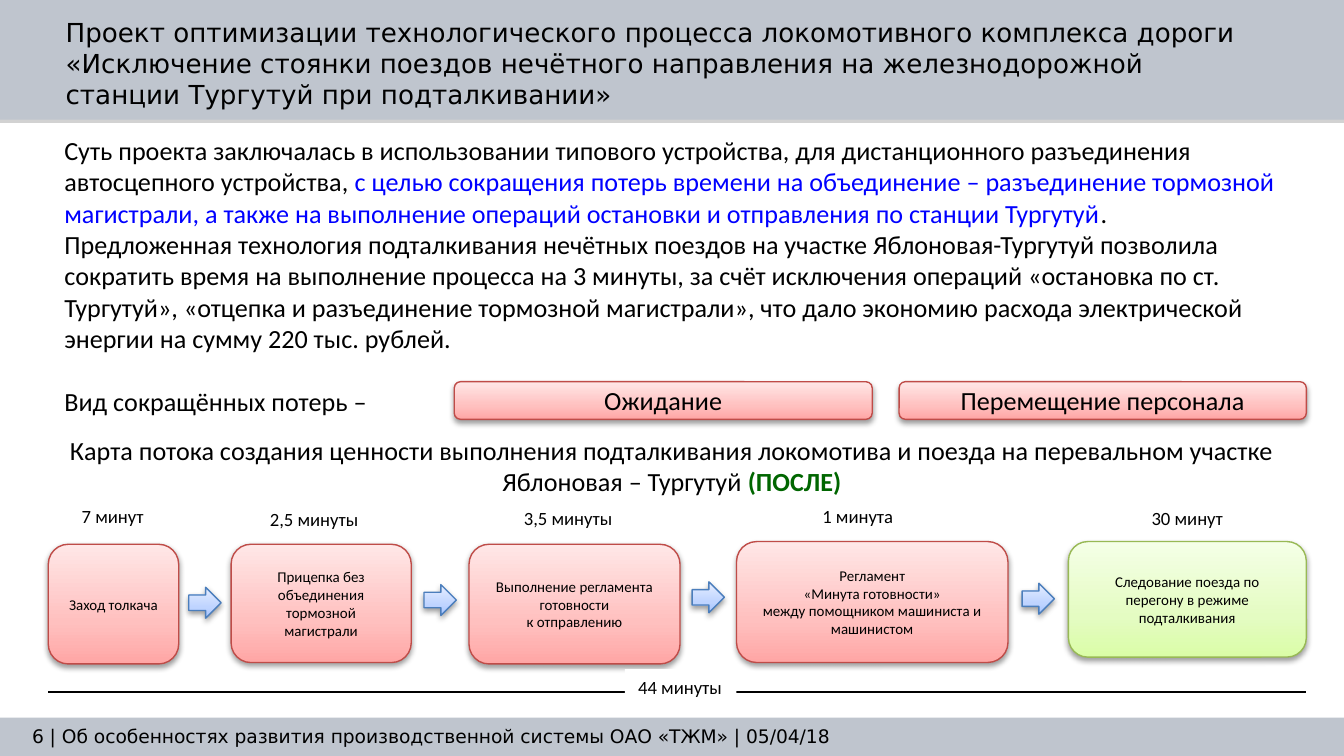
from dataclasses import dataclass

from lxml import etree
from pptx import Presentation
from pptx.dml.color import RGBColor
from pptx.enum.shapes import MSO_CONNECTOR, MSO_SHAPE
from pptx.enum.text import MSO_ANCHOR, PP_ALIGN
from pptx.oxml import parse_xml
from pptx.oxml.ns import nsdecls, qn
from pptx.util import Inches, Pt


@dataclass(frozen=True)
class Theme:
    body_font: str = "Calibri"
    heading_font: str = "DejaVu Sans"
    body_size: int = 14
    small_size: int = 10
    step_size: int = 8
    black: str = "000000"
    white: str = "FFFFFF"
    blue: str = "0000FF"
    green: str = "006600"
    bar: str = "BFC5CE"
    # Line colour, then gradient colours from bottom to top
    red_box: tuple = ("BF4C48", "FFA6A5", "FFC0BF", "FFE7E7")
    green_box: tuple = ("98B955", "DAFDA7", "E4FCC2", "F5FFE7")
    blue_box: tuple = ("4B7EBC", "A4C4FF", "BFD4FF", "E6EEFF")
    # Colour, opacity %, blur pt, distance pt
    bar_shadow: tuple = ("808080", 35, 0, 1.8)
    box_shadow: tuple = ("000000", 38, 3.1, 1.6)


THEME = Theme()
SLIDE_WIDTH = 10
SLIDE_HEIGHT = SLIDE_WIDTH * 9 / 16

TITLE = [
    "Проект оптимизации технологического процесса локомотивного комплекса дороги",
    "«Исключение стоянки поездов нечётного направления на железнодорожной",
    "станции Тургутуй при подталкивании»",
]
FOOTER = "6 | Об особенностях развития производственной системы ОАО «ТЖМ» | 05/04/18"
# A paragraph is a string or a list of (text, colour, bold) runs
SUMMARY = [
    [
        ("Суть проекта заключалась в использовании типового устройства, для дистанционного "
         "разъединения автосцепного устройства, ", THEME.black, False),
        ("с целью сокращения потерь времени на объединение – разъединение тормозной "
         "магистрали, а также на выполнение операций остановки и отправления по станции "
         "Тургутуй", THEME.blue, False),
        (".", THEME.black, False),
    ],
    "Предложенная технология подталкивания нечётных поездов на участке Яблоновая-Тургутуй "
    "позволила сократить время на выполнение процесса на 3 минуты, за счёт исключения операций "
    "«остановка по ст. Тургутуй», «отцепка и разъединение тормозной магистрали», что дало "
    "экономию расхода электрической энергии на сумму 220 тыс. рублей.",
    "Вид сокращённых потерь –",
]
LOSSES = [("Ожидание", 3.38, 3.11), ("Перемещение персонала", 6.69, 3.03)]
MAP_TITLE = [[
    ("Карта потока создания ценности выполнения подталкивания локомотива и поезда на "
     "перевальном участке Яблоновая – Тургутуй ", THEME.black, False),
    ("(ПОСЛЕ)", THEME.green, True),
]]
# Paragraphs, box (left, top, width, height), colours, duration, its (left, top, width)
STEPS = [
    (["Заход толкача"], (0.36, 4.05, 0.97, 0.89), THEME.red_box,
     "7 минут", (0.51, 3.71, 1)),
    (["Прицепка без объединения тормозной магистрали"], (1.72, 4.05, 1.34, 0.88),
     THEME.red_box, "2,5 минуты", (1.91, 3.73, 1.33)),
    (["Выполнение регламента готовности", "к отправлению"], (3.49, 4.05, 1.57, 0.89),
     THEME.red_box, "3,5 минуты", (3.8, 3.72, 1.36)),
    (["Регламент", "«Минута готовности»", "между помощником машиниста и машинистом"],
     (5.48, 4.03, 2.02, 0.9), THEME.red_box, "1 минута", (6.02, 3.71, 1.12)),
    (["Следование поезда по перегону в режиме подталкивания"], (7.95, 4.03, 1.77, 0.86),
     THEME.green_box, "30 минут", (8.47, 3.72, 1.23)),
]
ARROW_TOPS = [4.37, 4.35, 4.33, 4.34]
ARROW_WIDTH, ARROW_HEIGHT = 0.24, 0.23
TOTAL = "44 минуты"


def color(value):
    return RGBColor.from_string(value)


def write(shape, paragraphs, size, font=THEME.body_font, align=PP_ALIGN.LEFT,
          anchor=MSO_ANCHOR.TOP, indent=0):
    frame = shape.text_frame
    frame.word_wrap = True
    frame.vertical_anchor = anchor
    for index, content in enumerate(paragraphs):
        paragraph = frame.paragraphs[0] if index == 0 else frame.add_paragraph()
        paragraph.alignment = align
        if indent:
            properties = paragraph._p.get_or_add_pPr()
            properties.set("marL", str(Inches(indent)))
            properties.set("indent", "0")
        paragraph.font.name = font
        paragraph.font.size = Pt(size)
        paragraph.font.color.rgb = color(THEME.black)
        if isinstance(content, str):
            content = [(content, THEME.black, False)]
        for text, run_color, bold in content:
            run = paragraph.add_run()
            run.text = text
            if run_color != THEME.black:
                run.font.color.rgb = color(run_color)
            if bold:
                run.font.bold = True


def add_text(slide, box, paragraphs, size, **options):
    shape = slide.shapes.add_textbox(*map(Inches, box))
    write(shape, paragraphs, size, **options)
    return shape


def add_shadow(shape, shadow):
    rgb, opacity, blur, distance = shadow
    shape.shadow.inherit = False
    effects = shape._element.spPr.find(qn("a:effectLst"))
    effects.append(parse_xml(
        f'<a:outerShdw {nsdecls("a")} blurRad="{Pt(blur)}" dist="{Pt(distance)}" '
        f'dir="5400000" rotWithShape="0"><a:srgbClr val="{rgb}">'
        f'<a:alpha val="{opacity * 1000}"/></a:srgbClr></a:outerShdw>'))


def add_flat(slide, box, fill):
    shape = slide.shapes.add_shape(MSO_SHAPE.RECTANGLE, *map(Inches, box))
    shape.shadow.inherit = False
    shape.fill.solid()
    shape.fill.fore_color.rgb = color(fill)
    shape.line.fill.background()
    return shape


def add_glossy(slide, kind, box, colors):
    """Add a shape with a three-stop vertical gradient, thin outline and shadow."""
    line, *stops = colors
    shape = slide.shapes.add_shape(kind, *map(Inches, box))
    shape.line.color.rgb = color(line)
    shape.line.width = Pt(0.75)
    add_shadow(shape, THEME.box_shadow)
    stop_xml = "".join(f'<a:gs pos="{position * 1000}"><a:srgbClr val="{rgb}"/></a:gs>'
                       for position, rgb in zip((0, 35, 100), stops))
    gradient = parse_xml(f'<a:gradFill {nsdecls("a")} rotWithShape="1"><a:gsLst>{stop_xml}'
                         '</a:gsLst><a:lin ang="16200000" scaled="0"/></a:gradFill>')
    shape._element.spPr.find(qn("a:prstGeom")).addnext(gradient)
    return shape


def add_box(slide, box, colors, paragraphs, size):
    shape = add_glossy(slide, MSO_SHAPE.ROUNDED_RECTANGLE, box, colors)
    write(shape, paragraphs, size, align=PP_ALIGN.CENTER, anchor=MSO_ANCHOR.MIDDLE)


def add_frame(slide):
    for top, height in ((0, 0.89), (5.34, 0.29)):
        bar = add_flat(slide, (0, top, SLIDE_WIDTH, height), THEME.bar)
        add_shadow(bar, THEME.bar_shadow)
    add_text(slide, (0.14, 5.33, 9.04, 0.3), [FOOTER], THEME.small_size,
             font=THEME.heading_font, anchor=MSO_ANCHOR.MIDDLE)
    add_text(slide, (0, 0.07, SLIDE_WIDTH, 0.81), TITLE, THEME.body_size,
             font=THEME.heading_font, indent=0.39)


def add_summary(slide):
    summary = add_text(slide, (-0.01, 1.26, SLIDE_WIDTH, 1.58), SUMMARY, THEME.body_size,
                       anchor=MSO_ANCHOR.MIDDLE, indent=0.39)
    summary.text_frame.paragraphs[-1].space_before = Pt(17)
    for text, left, width in LOSSES:
        add_box(slide, (left, 2.84, width, 0.28), THEME.red_box, [text], THEME.body_size)


def add_value_stream(slide):
    add_text(slide, (0, 3.18, SLIDE_WIDTH, 0.57), MAP_TITLE, THEME.body_size,
             align=PP_ALIGN.CENTER)
    for paragraphs, box, colors, duration, place in STEPS:
        add_box(slide, box, colors, paragraphs, THEME.step_size)
        add_text(slide, (*place, 0.33), [duration], THEME.small_size)
    boxes = [step[1] for step in STEPS]
    for before, after, top in zip(boxes, boxes[1:], ARROW_TOPS):
        middle = (before[0] + before[2] + after[0]) / 2
        add_glossy(slide, MSO_SHAPE.RIGHT_ARROW,
                   (middle - ARROW_WIDTH / 2, top, ARROW_WIDTH, ARROW_HEIGHT), THEME.blue_box)

    line = slide.shapes.add_connector(MSO_CONNECTOR.STRAIGHT, Inches(0.36), Inches(5.15),
                                      Inches(9.72), Inches(5.15))
    line.line.color.rgb = color(THEME.black)
    line.line.width = Pt(0.75)
    etree.SubElement(line._element.spPr, qn("a:effectLst"))
    write(add_flat(slide, (4.65, 4.98, 0.83, 0.27), THEME.white), [TOTAL], THEME.small_size)


presentation = Presentation()
presentation.slide_width = Inches(SLIDE_WIDTH)
presentation.slide_height = Inches(SLIDE_HEIGHT)
slide = presentation.slides.add_slide(presentation.slide_layouts[6])
add_frame(slide)
add_summary(slide)
add_value_stream(slide)
presentation.save("out.pptx")
